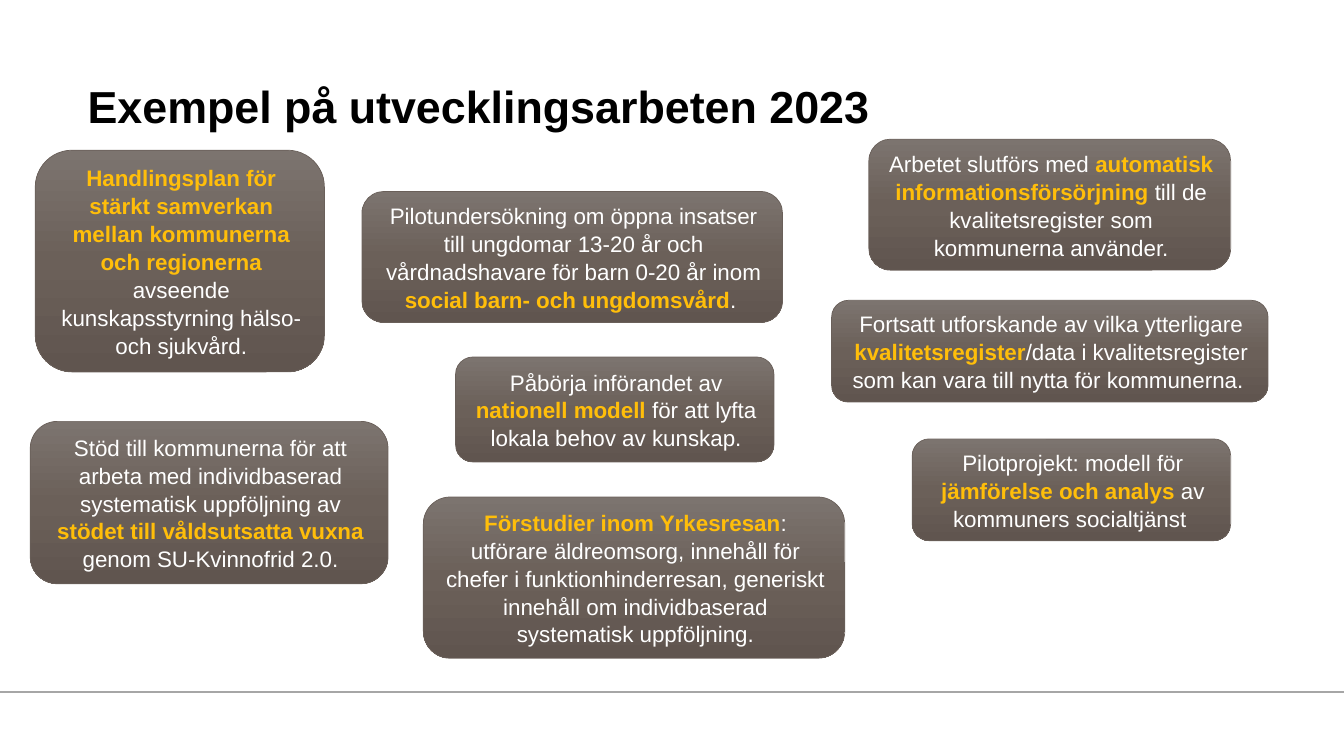
import copy

import pptx
import pptx.dml.color
import pptx.enum.shapes
import pptx.enum.text
import pptx.oxml
import pptx.util

Pt = pptx.util.Pt
MIDDLE = pptx.enum.text.MSO_ANCHOR.MIDDLE
ALIGN = pptx.enum.text.PP_ALIGN


def rgb(value):
    return pptx.dml.color.RGBColor.from_string(value)


class Deck:
    font = "Arial"
    title_color = "000000"
    text_color = "FFFFFF"
    accent = "FFBE0A"
    edge = "6A605A"
    rule_color = "A6A6A6"
    gradient = ("7C746F", "6B6059", "60554F")

    def __init__(self, width, height):
        self.prs = pptx.Presentation()
        self.prs.slide_width = Pt(width)
        self.prs.slide_height = Pt(height)
        self.slide = self.prs.slides.add_slide(self.prs.slide_layouts[5])

    def title(self, text, x, y, w, h):
        sp = self.slide.shapes.title
        sp.left, sp.top, sp.width, sp.height = Pt(x), Pt(y), Pt(w), Pt(h)
        tf = sp.text_frame
        tf.text = text
        tf.vertical_anchor = MIDDLE
        p = tf.paragraphs[0]
        p.alignment = ALIGN.LEFT
        p.line_spacing = 0.9
        self.style(p.font, 32, self.title_color)
        p.font.bold = True

    def style(self, font, size, color):
        font.name = self.font
        font.size = Pt(size)
        font.color.rgb = rgb(color)

    def rule(self, x1, x2, y):
        line = self.slide.shapes.add_connector(
            pptx.enum.shapes.MSO_CONNECTOR.STRAIGHT, Pt(x1), Pt(y), Pt(x2), Pt(y))
        line.line.color.rgb = rgb(self.rule_color)
        line.line.width = Pt(1.5)
        pptx.oxml.ns.qn("a:effectLst")
        line._element.spPr.append(pptx.oxml.xmlchemy.OxmlElement("a:effectLst"))

    def shade(self, fill):
        fill.gradient()
        fill.gradient_angle = 270
        stops = fill.gradient_stops
        first = stops[0]._stop if hasattr(stops[0], "_stop") else stops[0]._gs
        first.addnext(copy.deepcopy(first))
        for i, (stop, color) in enumerate(zip(fill.gradient_stops, self.gradient)):
            stop.color.rgb = rgb(color)
            stop.position = i / 2

    def card(self, x, y, w, h, before, highlight, after):
        sp = self.slide.shapes.add_shape(
            pptx.enum.shapes.MSO_SHAPE.ROUNDED_RECTANGLE, Pt(x), Pt(y), Pt(w), Pt(h))
        sp.shadow.inherit = False
        self.shade(sp.fill)
        sp.line.color.rgb = rgb(self.edge)
        sp.line.width = Pt(0.5)
        tf = sp.text_frame
        tf.word_wrap = True
        tf.vertical_anchor = MIDDLE
        p = tf.paragraphs[0]
        p._p.get_or_add_pPr().set("marL", str(Pt(2)))
        p.alignment = ALIGN.CENTER
        p.line_spacing = 1.04
        p.space_after = Pt(6)
        self.style(p.font, 16, self.text_color)
        for text in filter(None, (before, highlight, after)):
            r = p.add_run()
            r.text = text
            if text == highlight:
                r.font.bold = True
                r.font.color.rgb = rgb(self.accent)

    def save(self):
        self.prs.save("out.pptx")


CARDS = [
    (258.5, 136.8, 300.5, 93.6,
     "Pilotundersökning om öppna insatser till ungdomar 13-20 år och "
     "vårdnadshavare för barn 0-20 år inom ",
     "social barn- och ungdomsvård", ". "),
    (325.4, 255, 227.5, 75,
     "Påbörja införandet av ", "nationell modell ",
     "för att lyfta lokala behov av kunskap."),
    (21.6, 301, 255.6, 116,
     "Stöd till kommunerna för att arbeta med individbaserad systematisk "
     "uppföljning av ",
     "stödet till våldsutsatta vuxna ", "genom SU-Kvinnofrid 2.0."),
    (620.6, 99.4, 258.5, 93.6,
     "Arbetet slutförs med ", "automatisk informationsförsörjning ",
     "till de kvalitetsregister som kommunerna använder."),
    (594, 214.5, 311.8, 72.7,
     "Fortsatt utforskande av vilka ytterligare ", "kvalitetsregister",
     "/data i kvalitetsregister som kan vara till nytta för kommunerna. "),
    (302.4, 355, 301, 115.2,
     "", "Förstudier inom Yrkesresan",
     ": utförare äldreomsorg, innehåll för chefer i funktionhinderresan, "
     "generiskt innehåll om individbaserad systematisk uppföljning."),
    (25.2, 107.3, 206.6, 158.4,
     "", "Handlingsplan för stärkt samverkan mellan kommunerna och regionerna ",
     "avseende kunskapsstyrning hälso- och sjukvård."),
    (651.6, 313.5, 227.5, 72.7,
     "Pilotprojekt: modell för ", "jämförelse och analys ",
     "av kommuners socialtjänst "),
]


def main():
    deck = Deck(960, 540)
    deck.rule(0, 960, 494.6)
    deck.title("Exempel på utvecklingsarbeten 2023", 55.4, 50.4, 599.8, 54.7)
    for card in CARDS:
        deck.card(*card)
    deck.save()


if __name__ == "__main__":
    main()
